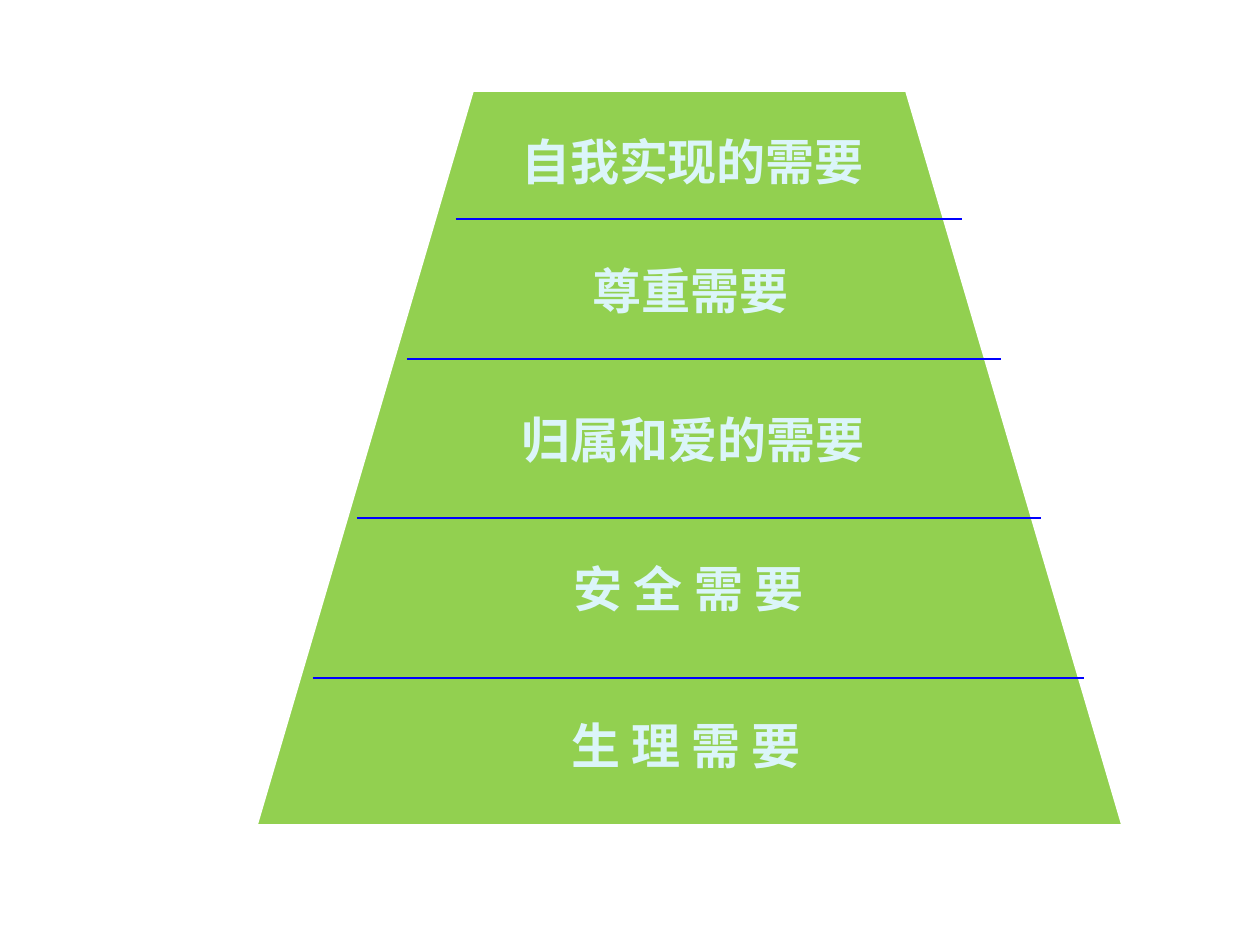
from dataclasses import dataclass

from lxml import etree
from pptx import Presentation
from pptx import util as u
from pptx.dml.color import RGBColor
from pptx.enum import shapes, text
from pptx.oxml.ns import qn

SCALE = 914400 / 126


def px(length):
    return u.Emu(round(length * SCALE))


@dataclass(frozen=True)
class Theme:
    pyramid: str = "92D050"
    outline: str = "FFFFFF"
    divider: str = "0000FF"
    label: str = "DBF5F9"
    label_size: int = 28
    line_width: int = 1
    cjk_font: str = "Noto Sans CJK SC"
    latin_font: str = "Times New Roman"


class SlideBuilder:
    def __init__(self, slide, theme):
        self.slide = slide
        self.theme = theme

    def style_line(self, line, color):
        line.color.rgb = RGBColor.from_string(color)
        line.width = u.Pt(self.theme.line_width)

    def polygon(self, points):
        builder = self.slide.shapes.build_freeform(*points[0], scale=SCALE)
        builder.add_line_segments(points[1:], close=True)
        shape = builder.convert_to_shape()
        shape.shadow.inherit = False
        shape.fill.solid()
        shape.fill.fore_color.rgb = RGBColor.from_string(self.theme.pyramid)
        self.style_line(shape.line, self.theme.outline)

    def divider(self, left, right, y):
        connector = self.slide.shapes.add_connector(
            shapes.MSO_CONNECTOR.STRAIGHT, px(left), px(y), px(right), px(y))
        self.style_line(connector.line, self.theme.divider)
        etree.SubElement(connector._element.spPr, qn("a:effectLst"))

    def label(self, wording, left, top, width, font_name):
        shape = self.slide.shapes.add_textbox(px(left), px(top), px(width), px(72))
        frame = shape.text_frame
        frame.word_wrap = True
        frame.auto_size = text.MSO_AUTO_SIZE.SHAPE_TO_FIT_TEXT
        paragraph = frame.paragraphs[0]
        paragraph.alignment = text.PP_ALIGN.CENTER
        run = paragraph.add_run()
        run.text = wording
        run.font.name = font_name
        run.font.size = u.Pt(self.theme.label_size)
        run.font.bold = True
        run.font.color.rgb = RGBColor.from_string(self.theme.label)


def main():
    presentation = Presentation()
    presentation.slide_width, presentation.slide_height = px(1260), px(945)
    slide = presentation.slides.add_slide(presentation.slide_layouts[6])
    theme = Theme()
    builder = SlideBuilder(slide, theme)

    builder.polygon([(257, 825), (473, 91), (906, 91), (1122, 825)])
    for left, right, y in [(456, 962, 219), (407, 1001, 359),
                           (357, 1041, 518), (313, 1084, 678)]:
        builder.divider(left, right, y)

    needs = [
        ("自我实现的需要", 491, 125, 403, theme.latin_font),
        ("尊重需要", 471, 254, 439, theme.latin_font),
        ("归属和爱的需要", 432, 403, 522, theme.latin_font),
        ("安 全 需 要", 392, 552, 593, theme.cjk_font),
        ("生 理 需 要", 330, 709, 712, theme.cjk_font),
    ]
    for need in needs:
        builder.label(*need)

    presentation.save("out.pptx")


if __name__ == "__main__":
    main()
